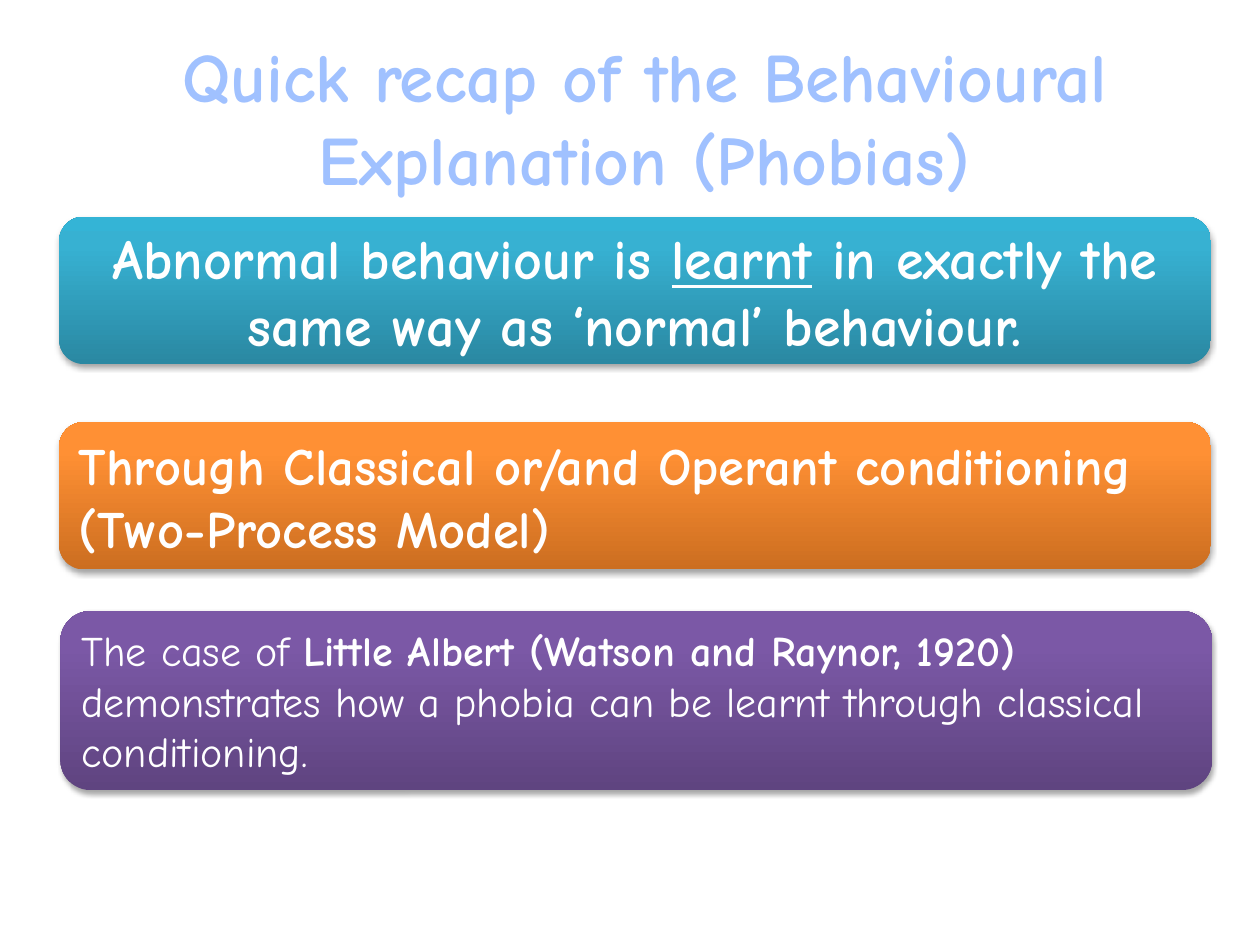
from copy import deepcopy
from dataclasses import dataclass
from typing import Optional

from lxml.etree import SubElement
from pptx import Presentation
from pptx.dml.color import RGBColor
from pptx.enum.shapes import MSO_SHAPE as Shape
from pptx.enum.text import MSO_ANCHOR as Anchor, MSO_AUTO_SIZE as AutoSize, PP_ALIGN as Align
from pptx.oxml.ns import qn
from pptx.util import Inches, Pt

FONT = "Comic Neue"
COLORS = {
    "title": "A0C1FF",
    "text": "FFFFFF",
    "shadow": "000000",
}
GRADIENTS = {
    "teal": ("2A88A2", "37B1D2", "34B4D6"),
    "orange": ("CC6E20", "FF9034", "FF9136"),
    "purple": ("5F4480", "7B58A6", "7C57A8"),
}
STOP_POSITIONS = (0, 0.8, 1)


@dataclass
class Run:
    text: str
    bold: bool = True
    underline: Optional[bool] = None


@dataclass
class Panel:
    left: float
    top: float
    height: float
    gradient: str
    size: float
    align: Align
    runs: list[Run]


PANELS = [
    Panel(0.47, 1.72, 1.17, "teal", 32, Align.CENTER, [
        Run("Abnormal behaviour is "),
        Run("learnt", underline=True),
        Run(" in exactly the same way as ‘normal’ behaviour."),
    ]),
    Panel(0.47, 3.35, 1.17, "orange", 30, Align.LEFT, [
        Run("Through Classical or/and Operant conditioning (Two-Process Model)"),
    ]),
    Panel(0.48, 4.85, 1.42, "purple", 24, Align.LEFT, [
        Run("The case of ", bold=False),
        Run("Little Albert (Watson and Raynor, 1920) "),
        Run("demonstrates how a phobia can be learnt through classical conditioning.", bold=False),
    ]),
]
PANEL_WIDTH = 9.14


def write_text(shape, runs: list[Run], *, size: float, color: str, align: Align) -> None:
    frame = shape.text_frame
    frame.word_wrap = True
    frame.auto_size = AutoSize.NONE
    frame.vertical_anchor = Anchor.MIDDLE
    paragraph = frame.paragraphs[0]
    paragraph.alignment = align
    for item in runs:
        run = paragraph.add_run()
        run.text = item.text
        font = run.font
        font.name = FONT
        font.size = Pt(size)
        font.bold = item.bold
        font.underline = item.underline
        font.color.rgb = RGBColor.from_string(color)


def fill_gradient(shape, colors: tuple[str, ...]) -> None:
    shape.fill.gradient()
    shape.fill.gradient_angle = 90
    stop_list = shape._element.spPr.find(f".//{qn('a:gsLst')}")
    stop_list.append(deepcopy(stop_list[-1]))
    for stop, color, position in zip(shape.fill.gradient_stops, colors, STOP_POSITIONS):
        stop.color.rgb = RGBColor.from_string(color)
        stop.position = position


def add_shadow(shape) -> None:
    shape.shadow.inherit = False
    effects = shape._element.spPr.find(qn("a:effectLst"))
    shadow = SubElement(effects, qn("a:outerShdw"), blurRad=str(Pt(3.1)),
                        dist=str(Pt(1.8)), dir="5400000", rotWithShape="0")
    color = SubElement(shadow, qn("a:srgbClr"), val=COLORS["shadow"])
    SubElement(color, qn("a:alpha"), val="35000")


def draw_panel(slide, panel: Panel) -> None:
    shape = slide.shapes.add_shape(
        Shape.ROUNDED_RECTANGLE, Inches(panel.left), Inches(panel.top),
        Inches(PANEL_WIDTH), Inches(panel.height))
    fill_gradient(shape, GRADIENTS[panel.gradient])
    shape.line.fill.background()
    add_shadow(shape)
    write_text(shape, panel.runs, size=panel.size, color=COLORS["text"], align=panel.align)


def main() -> None:
    presentation = Presentation()
    presentation.slide_width = Inches(10)
    presentation.slide_height = Inches(7.5)
    slide = presentation.slides.add_slide(presentation.slide_layouts[5])
    title = slide.shapes.title
    title.left, title.top = Inches(0.23), Inches(0.3)
    title.width, title.height = Inches(9.77), Inches(1.25)
    write_text(title, [Run("Quick recap of the Behavioural Explanation (Phobias)")],
               size=39.6, color=COLORS["title"], align=Align.CENTER)
    for panel in PANELS:
        draw_panel(slide, panel)
    presentation.save("out.pptx")


if __name__ == "__main__":
    main()
